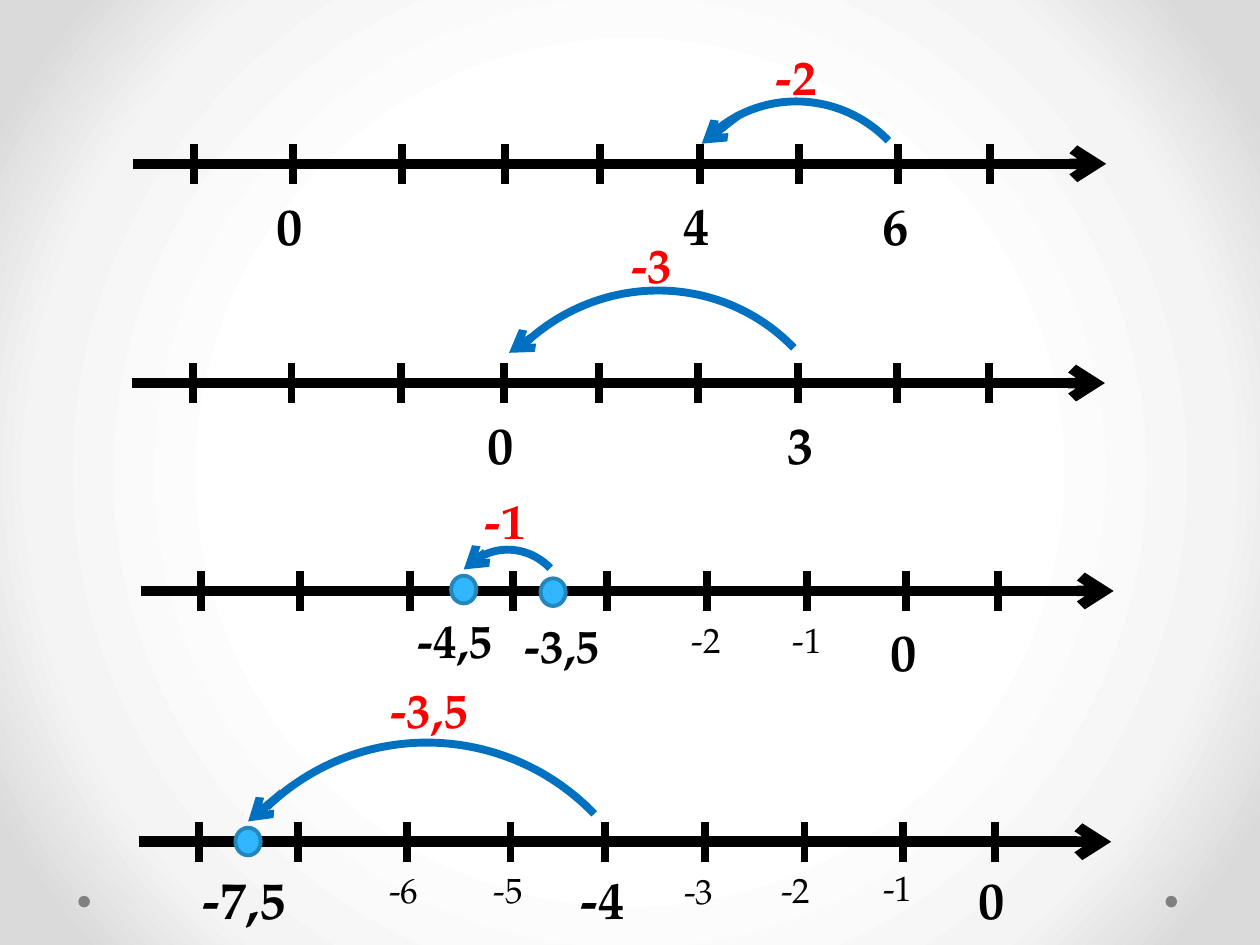
from lxml import etree
from pptx import Presentation
from pptx import util as u
from pptx.dml.color import RGBColor
from pptx.enum import shapes, text
from pptx.oxml import ns

COLOURS = {
    "ink": "000000",
    "jump": "0070C0",
    "change": "FF0000",
    "point": "31B6FD",
    "point_edge": "2487BB",
    "corner": "808080",
}
BACKGROUND = [(50, "FFFFFF"), (76, "F4F4F4"), (92, "DADADA")]
FONT = "TeX Gyre Pagella"
TEXT_EMS = {1: 0.58, 2: 0.9, 4: 1.75}
TICKS = [34.5, 91, 153.5, 212.5, 266.5, 323.5, 380.5, 437, 489.5]
AXIS_LENGTH = 555.8

NUMBER_LINES = [
    {
        "axis": (76.3, 93.6),
        "arc": (383.8, 57.6, 144, 145.4),
        "arrow": (422.6, 65.5, 401, 82.1),
        "change": ("-2", 456.1, 23),
        "points": [],
        "labels": [("0", 30, 167, 106.6), ("4", 30, 399.6, 106.6),
                   ("6", 30, 513.4, 106.6)],
    },
    {
        "axis": (75.6, 218.9),
        "arc": (263.5, 167, 221, 216.7),
        "arrow": (302.4, 193.7, 290.9, 201.6),
        "change": ("-3", 373.3, 130.3),
        "points": [],
        "labels": [("0", 30, 287.3, 231.8), ("3", 30, 458.6, 231.8)],
    },
    {
        "axis": (80.6, 337.7),
        "arc": (260.6, 313.2, 62.6, 66.2),
        "arrow": (275, 317.5, 265, 325.4),
        "change": ("-1", 289.8, 276.5),
        "points": [(257.8, 329), (308.9, 330.5)],
        "labels": [("-4,5", 27, 262.4, 345.6), ("-3,5", 27, 323.6, 348.5),
                   ("-2", 20, 404.3, 349.9), ("-1", 20, 461.9, 349.9),
                   ("0", 30, 517.7, 349.9)],
    },
    {
        "axis": (79.2, 481),
        "arc": (112.3, 424.1, 264.2, 265),
        "arrow": (161.3, 452.9, 141.8, 469.4),
        "change": ("-3,5", 247.7, 384.5),
        "points": [(134.6, 473)],
        "labels": [("-7,5", 30, 142.2, 491.8), ("-6", 20, 231.5, 492.5),
                   ("-5", 20, 291.2, 492.5), ("-4", 30, 345.6, 491.8),
                   ("-3", 20, 400, 493.2), ("-2", 20, 455.4, 492.5),
                   ("-1", 20, 513.7, 491.8), ("0", 30, 568.1, 491.8)],
    },
]


def rgb(name):
    return RGBColor.from_string(COLOURS[name])


def pts(*values):
    return [u.Pt(v) for v in values]


class Board:
    def __init__(self, slide):
        self.s = slide

    def background(self, stops):
        self.s.background.fill.gradient()
        grad = self.s._element.find(".//" + ns.qn("a:gradFill"))
        for child in list(grad):
            grad.remove(child)
        stop_list = etree.SubElement(grad, ns.qn("a:gsLst"))
        for position, colour in stops:
            gs = etree.SubElement(stop_list, ns.qn("a:gs"), pos=str(position * 1000))
            etree.SubElement(gs, ns.qn("a:srgbClr"), val=colour)
        shade = etree.SubElement(grad, ns.qn("a:path"), path="circle")
        etree.SubElement(shade, ns.qn("a:fillToRect"),
                         {side: "50000" for side in "ltrb"})

    def line(self, x1, y1, x2, y2, colour="ink", width=4.5, arrow=False):
        sp = self.s.shapes.add_connector(
            shapes.MSO_CONNECTOR.STRAIGHT, *pts(x1, y1, x2, y2))
        sp.line.color.rgb = rgb(colour)
        sp.line.width = u.Pt(width)
        if arrow:
            etree.SubElement(sp.line._get_or_add_ln(), ns.qn("a:tailEnd"), type="arrow")
        etree.SubElement(sp._element.spPr, ns.qn("a:effectLst"))

    def shape(self, kind, box, fill=None, edge=None, width=0):
        sp = self.s.shapes.add_shape(kind, *pts(*box))
        sp.shadow.inherit = False
        if fill:
            sp.fill.solid()
            sp.fill.fore_color.rgb = rgb(fill)
        else:
            sp.fill.background()
        if edge:
            sp.line.color.rgb = rgb(edge)
            sp.line.width = u.Pt(width)
        else:
            sp.line.fill.background()
        return sp

    def arc(self, box):
        sp = self.shape(shapes.MSO_SHAPE.ARC, box, edge="jump", width=4.5)
        sp.rotation = 316.1

    def point(self, left, top):
        self.shape(shapes.MSO_SHAPE.FLOWCHART_CONNECTOR, (left, top, 14.4, 15.8),
                   "point", "point_edge", 2.25)

    def label(self, value, size, centre, top, colour="ink"):
        width = TEXT_EMS[len(value)] * size + 14.4
        height = 1.22 * size + 7.2
        sp = self.s.shapes.add_textbox(*pts(centre - width / 2, top, width, height))
        tf = sp.text_frame
        tf.word_wrap = False
        tf.auto_size = text.MSO_AUTO_SIZE.SHAPE_TO_FIT_TEXT
        p = tf.paragraphs[0]
        p.text = value
        p.font.name = FONT
        p.font.size = u.Pt(size)
        p.font.bold = size > 20
        p.font.color.rgb = rgb(colour)

    def number_line(self, row):
        x, y = row["axis"]
        self.line(x, y, x + AXIS_LENGTH, y, width=6, arrow=True)
        for tick in TICKS:
            self.line(x + tick, y - 11.2, x + tick, y + 11.5)
        for point in row["points"]:
            self.point(*point)
        self.line(*row["arrow"], colour="jump", arrow=True)
        self.arc(row["arc"])
        value, centre, top = row["change"]
        self.label(value, 28, centre, top, "change")
        for label in row["labels"]:
            self.label(*label)


def main():
    prs = Presentation()
    prs.slide_width, prs.slide_height = pts(720, 540)
    board = Board(prs.slides.add_slide(prs.slide_layouts[6]))
    board.background(BACKGROUND)
    for left in (666, 44.8):
        board.shape(shapes.MSO_SHAPE.OVAL, (left, 511.9, 6.6, 6.6), "corner")
    for row in NUMBER_LINES:
        board.number_line(row)
    prs.save("out.pptx")


if __name__ == "__main__":
    main()
